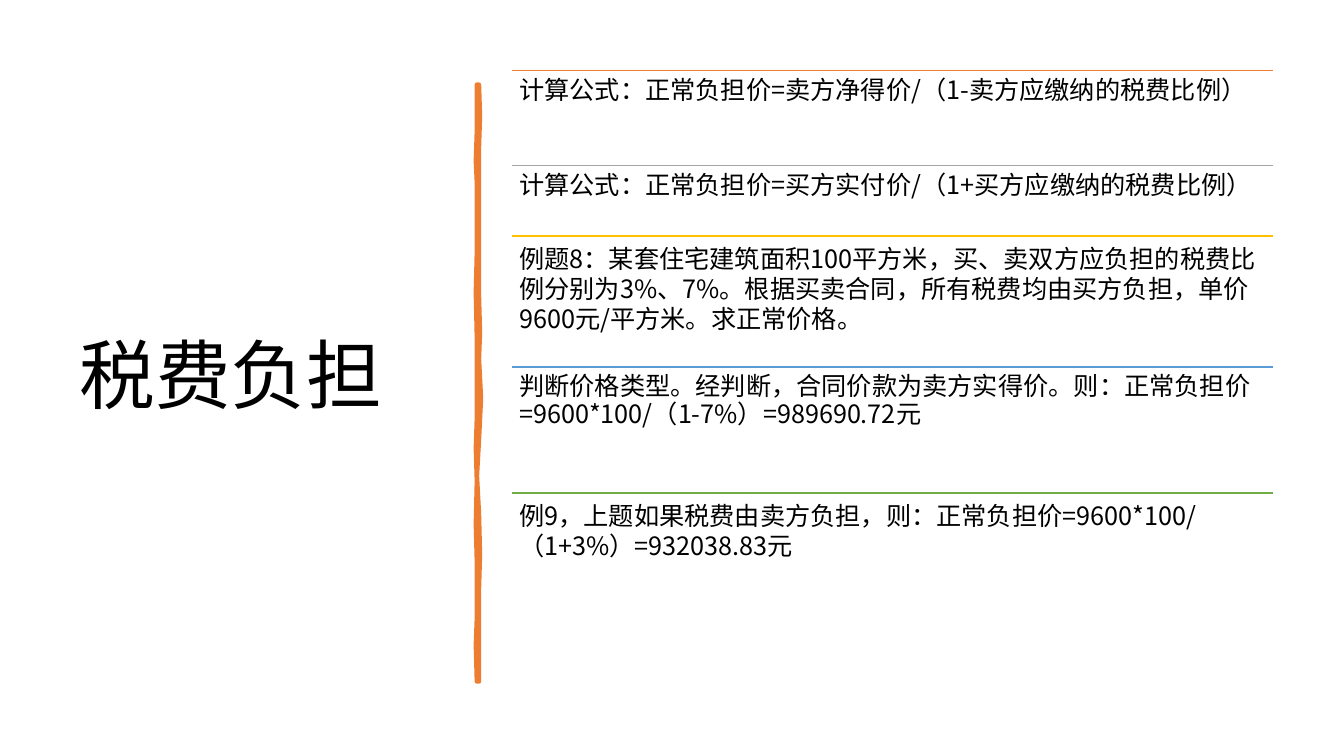
from dataclasses import dataclass

from lxml import etree
from pptx import Presentation
from pptx.dml.color import RGBColor
from pptx.enum.lang import MSO_LANGUAGE_ID
from pptx.enum.shapes import MSO_CONNECTOR
from pptx.enum.text import MSO_ANCHOR, MSO_AUTO_SIZE, PP_ALIGN
from pptx.oxml.ns import qn
from pptx.util import Inches, Pt

STRAIGHT = MSO_CONNECTOR.STRAIGHT
TOP, MIDDLE = MSO_ANCHOR.TOP, MSO_ANCHOR.MIDDLE
LEFT = PP_ALIGN.LEFT
NO_AUTOFIT = MSO_AUTO_SIZE.NONE
CHINESE = MSO_LANGUAGE_ID.SIMPLIFIED_CHINESE


@dataclass(frozen=True)
class Theme:
    font: str = "Noto Sans CJK SC"
    title_size: int = 54
    body_size: int = 18
    text: str = "000000"
    orange: str = "ED7D31"
    grey: str = "A5A5A5"
    gold: str = "FFC000"
    blue: str = "5B9BD5"
    green: str = "70AD47"


THEME = Theme()


def write(shape, text, size=THEME.body_size, anchor=TOP, inset=0.07, spacing=1.0, after=0):
    frame = shape.text_frame
    frame.word_wrap = True
    frame.auto_size = NO_AUTOFIT
    frame.vertical_anchor = anchor
    frame.margin_left = frame.margin_right = Inches(inset)
    frame.margin_top = frame.margin_bottom = Inches(inset)
    paragraph = frame.paragraphs[0]
    paragraph.alignment = LEFT
    paragraph.line_spacing = spacing
    paragraph.space_after = Pt(after)
    run = paragraph.add_run()
    run.text = text
    run.font.size = Pt(size)
    run.font.name = THEME.font
    run.font.language_id = CHINESE
    run.font.color.rgb = RGBColor.from_string(THEME.text)
    east_asian = etree.SubElement(run.font._element, qn("a:ea"))
    east_asian.set("typeface", THEME.font)


prs = Presentation()
prs.slide_width, prs.slide_height = Inches(13.33), Inches(7.5)
slide = prs.slides.add_slide(prs.slide_layouts[5])

title = slide.shapes.title
title.left, title.top = Inches(0.69), Inches(0.7)
title.width, title.height = Inches(3.74), Inches(6.11)
write(title, "税费负担", size=THEME.title_size, anchor=MIDDLE, inset=0.1, spacing=0.9)

# Hand-drawn divider: down the right edge, back up the left edge
right_edge = [(4.75, 0.84), (4.76, 1.15), (4.75, 1.46), (4.75, 2.26), (4.75, 2.94),
              (4.76, 3.3), (4.75, 3.56), (4.77, 3.95), (4.75, 4.36), (4.73, 4.72),
              (4.75, 5.1), (4.76, 5.5), (4.75, 5.84), (4.75, 6.76)]
left_edge = [(4.73, 6.76), (4.72, 6.4), (4.73, 6.13), (4.73, 5.57), (4.72, 5.2),
             (4.73, 4.77), (4.72, 4.45), (4.73, 4.15), (4.73, 3.35), (4.72, 2.9),
             (4.73, 2.5), (4.73, 1.81), (4.72, 1.6), (4.73, 1.3), (4.73, 0.84)]
outline = [(Inches(x), Inches(y)) for x, y in right_edge + left_edge]
builder = slide.shapes.build_freeform(*outline[0], scale=1.0)
builder.add_line_segments(outline[1:], close=True)
divider = builder.convert_to_shape()
divider.shadow.inherit = False
divider.fill.solid()
divider.fill.fore_color.rgb = RGBColor.from_string(THEME.orange)
divider.line.color.rgb = RGBColor.from_string(THEME.orange)
divider.line.width = Pt(3.25)

# Each step: height, line spacing, rule colour, text
steps = [
    (0.94, 0.9, THEME.orange, "计算公式：正常负担价=卖方净得价/（1-卖方应缴纳的税费比例）"),
    (0.7, 0.9, THEME.grey, "计算公式：正常负担价=买方实付价/（1+买方应缴纳的税费比例）"),
    (1.3, 1.0, THEME.gold,
     "例题8：某套住宅建筑面积100平方米，买、卖双方应负担的税费比例分别为3%、7%。"
     "根据买卖合同，所有税费均由买方负担，单价9600元/平方米。求正常价格。"),
    (1.25, 0.9, THEME.blue,
     "判断价格类型。经判断，合同价款为卖方实得价。则：正常负担价"
     "=9600*100/（1-7%）=989690.72元"),
    (1.87, 1.0, THEME.green,
     "例9，上题如果税费由卖方负担，则：正常负担价=9600*100/（1+3%）=932038.83元"),
]
steps_left, steps_width = Inches(5.08), Inches(7.55)
step_top = Inches(0.7)
for height, spacing, colour, text in steps:
    rule = slide.shapes.add_connector(
        STRAIGHT, steps_left, step_top, steps_left + steps_width, step_top)
    rule.line.color.rgb = RGBColor.from_string(colour)
    rule.line.width = Pt(1)
    etree.SubElement(rule._element.spPr, qn("a:effectLst"))
    step = slide.shapes.add_textbox(steps_left, step_top, steps_width, Inches(height))
    write(step, text, spacing=spacing, after=6.3)
    step_top += Inches(height)

prs.save("out.pptx")
